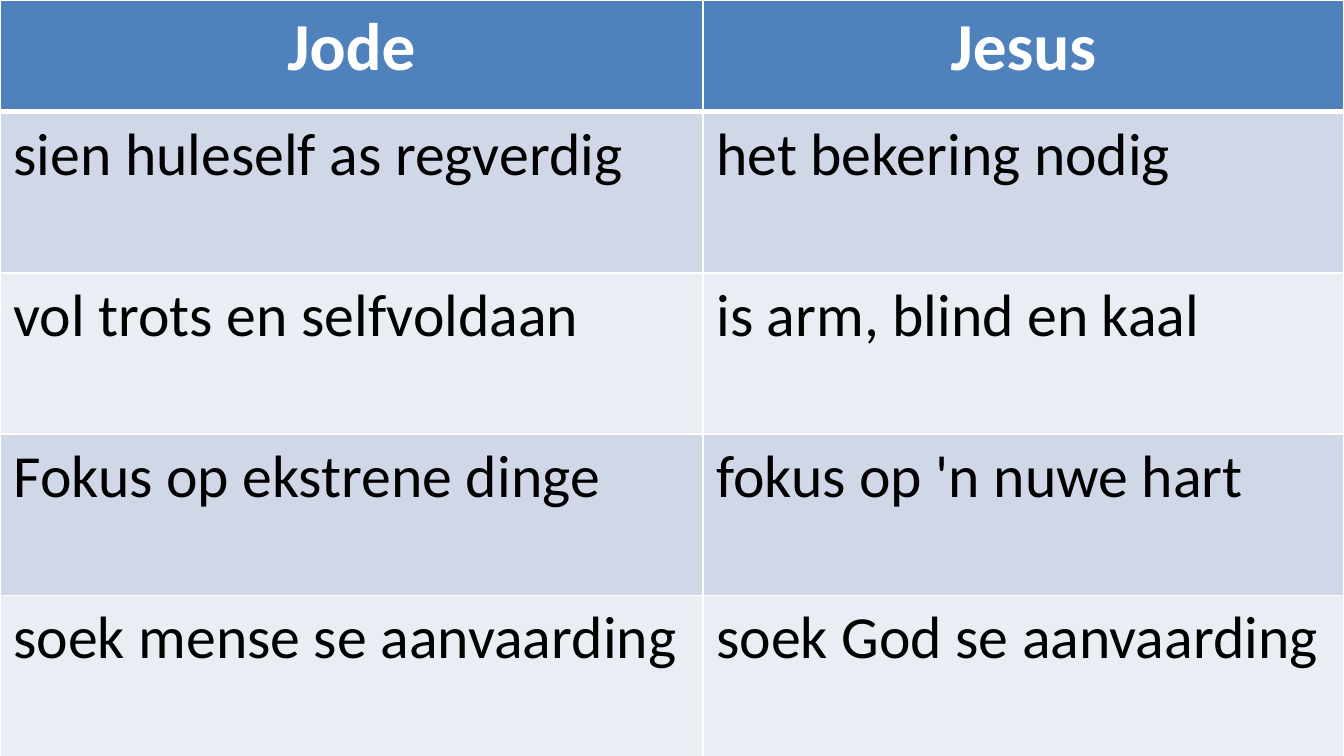
import pptx
import pptx.dml.color
import pptx.enum.text
import pptx.oxml
import pptx.oxml.ns
import pptx.util

Inches = pptx.util.Inches
Pt = pptx.util.Pt
RGBColor = pptx.dml.color.RGBColor

WHITE = RGBColor(0xFF, 0xFF, 0xFF)
BLACK = RGBColor(0x00, 0x00, 0x00)
HEADER_BLUE = RGBColor(0x4F, 0x81, 0xBD)
BAND_DARK = RGBColor(0xD0, 0xD8, 0xE8)
BAND_LIGHT = RGBColor(0xE9, 0xED, 0xF4)

COMPARISON = [
    ("Jode", "Jesus"),
    ("sien huleself as regverdig", "het bekering nodig"),
    ("vol trots en selfvoldaan", "is arm, blind en kaal"),
    ("Fokus op ekstrene dinge", "fokus op 'n nuwe hart"),
    ("soek mense se aanvaarding", "soek God se aanvaarding"),
]
SLIDE_WIDTH = 10
SLIDE_HEIGHT = SLIDE_WIDTH * 9 / 16
COLUMN_WIDTHS = [5.23, 4.77]
ROW_HEIGHTS = [0.83] + [1.2] * 4


def set_borders(cell, top, bottom):
    """Give a cell white borders, with top and bottom widths in points."""
    properties = cell._tc.get_or_add_tcPr()
    for side, width in (("L", 1), ("R", 1), ("T", top), ("B", bottom)):
        properties.append(pptx.oxml.parse_xml(
            f'<a:ln{side} {pptx.oxml.ns.nsdecls("a")} w="{Pt(width)}">'
            f'<a:solidFill><a:srgbClr val="{WHITE}"/></a:solidFill></a:ln{side}>'
        ))


def style_cell(cell, text, fill, color, size, bold, alignment):
    """Write and format the text of a cell and fill its background."""
    cell.fill.solid()
    cell.fill.fore_color.rgb = fill
    cell.text = text
    paragraph = cell.text_frame.paragraphs[0]
    paragraph.alignment = alignment
    paragraph.font.name = "Calibri"
    paragraph.font.size = Pt(size)
    paragraph.font.bold = bold
    paragraph.font.color.rgb = color


def add_comparison(slide):
    """Add the table that sets the two columns side by side."""
    align = pptx.enum.text.PP_ALIGN
    table = slide.shapes.add_table(
        len(ROW_HEIGHTS), len(COLUMN_WIDTHS), 0, 0,
        Inches(sum(COLUMN_WIDTHS)), Inches(sum(ROW_HEIGHTS)),
    ).table
    for column, width in zip(table.columns, COLUMN_WIDTHS):
        column.width = Inches(width)
    for index, (row, texts) in enumerate(zip(table.rows, COMPARISON)):
        row.height = Inches(ROW_HEIGHTS[index])
        band = BAND_DARK if index % 2 else BAND_LIGHT
        for cell, text in zip(row.cells, texts):
            set_borders(cell, 3 if index == 1 else 1, 3 if index == 0 else 1)
            if index == 0:
                style_cell(cell, text, HEADER_BLUE, WHITE, 36, True, align.CENTER)
            else:
                style_cell(cell, text, band, BLACK, 32, False, align.LEFT)


def main():
    """Build the one-slide presentation."""
    presentation = pptx.Presentation()
    presentation.slide_width = Inches(SLIDE_WIDTH)
    presentation.slide_height = Inches(SLIDE_HEIGHT)
    slide = presentation.slides.add_slide(presentation.slide_layouts[6])
    add_comparison(slide)
    presentation.save("out.pptx")


if __name__ == "__main__":
    main()
